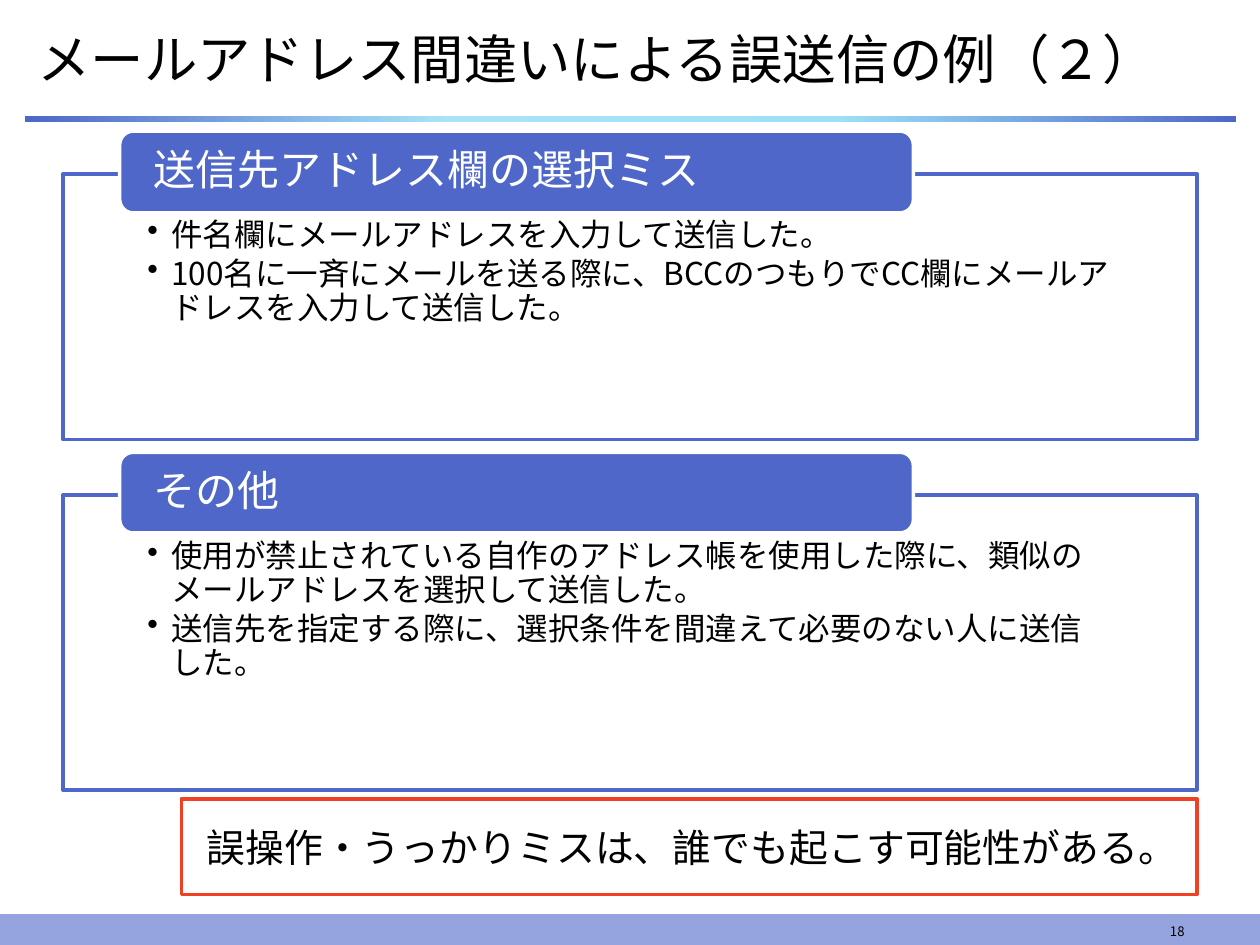
from lxml import etree
from pptx import Presentation
from pptx.dml.color import RGBColor
from pptx.enum.shapes import MSO_SHAPE
from pptx.enum.text import MSO_ANCHOR, PP_ALIGN
from pptx.oxml.ns import qn
from pptx.util import Inches, Pt

RECT, ROUNDED = MSO_SHAPE.RECTANGLE, MSO_SHAPE.ROUNDED_RECTANGLE
TOP, MIDDLE, BOTTOM = MSO_ANCHOR.TOP, MSO_ANCHOR.MIDDLE, MSO_ANCHOR.BOTTOM
LEFT, RIGHT = PP_ALIGN.LEFT, PP_ALIGN.RIGHT

FONT = "Noto Sans CJK JP"
BLUE, PALE_BLUE, RED = "4E67C8", "95A4DE", "F14124"
WHITE, BLACK = "FFFFFF", "000000"
RULE_STOPS = [(0, BLUE), (35, "A9E3F8"), (67, "9EE0F7"), (100, BLUE)]
DEFAULT_INSETS = (0.1, 0.05, 0.1, 0.05)

CARDS = [
    # frame box, tab height, heading, points
    ((0.5, 1.38, 9, 2.11), 0.65, "送信先アドレス欄の選択ミス", [
        "件名欄にメールアドレスを入力して送信した。",
        "100名に一斉にメールを送る際に、BCCのつもりでCC欄にメールアドレスを入力して送信した。",
    ]),
    ((0.5, 3.93, 9, 2.34), 0.64, "その他", [
        "使用が禁止されている自作のアドレス帳を使用した際に、類似のメールアドレスを選択して送信した。",
        "送信先を指定する際に、選択条件を間違えて必要のない人に送信した。",
    ]),
]


def rgb(color):
    return RGBColor.from_string(color)


def add_box(slide, box, fill, line=None, width=2, preset=RECT):
    shape = slide.shapes.add_shape(preset, *map(Inches, box))
    shape.shadow.inherit = False
    shape.fill.solid()
    shape.fill.fore_color.rgb = rgb(fill)
    if line:
        shape.line.color.rgb = rgb(line)
        shape.line.width = Pt(width)
    else:
        shape.line.fill.background()
    return shape


def add_bullet(paragraph, indent):
    properties = paragraph._p.get_or_add_pPr()
    properties.set("marL", str(Inches(indent)))
    properties.set("indent", str(-Inches(indent)))
    etree.SubElement(properties, qn("a:buChar"), char="•")


def write(shape, lines, size, color=BLACK, anchor=MIDDLE, insets=DEFAULT_INSETS,
          align=LEFT, spacing=1.0, after=0, bullet_indent=None):
    frame = shape.text_frame
    sides = ("margin_left", "margin_top", "margin_right", "margin_bottom")
    frame_format = {"word_wrap": True, "vertical_anchor": anchor,
                    **dict(zip(sides, map(Inches, insets)))}
    for name, value in frame_format.items():
        setattr(frame, name, value)
    frame.text = "\n".join(lines)
    paragraph_format = {"alignment": align, "line_spacing": spacing,
                        "space_after": Pt(after)}
    for paragraph in frame.paragraphs:
        for name, value in paragraph_format.items():
            setattr(paragraph, name, value)
        if bullet_indent:
            add_bullet(paragraph, bullet_indent)
        for run in paragraph.runs:
            run.font.size = Pt(size)
            run.font.name = FONT
            run.font.color.rgb = rgb(color)
            etree.SubElement(run._r.get_or_add_rPr(), qn("a:ea"), typeface=FONT)


def add_text(slide, box, text, size, **options):
    write(slide.shapes.add_textbox(*map(Inches, box)), [text], size, **options)


def add_header(slide, box):
    left, top, width, height = box
    add_text(slide, (left, top, width, 0.65), "メールアドレス間違いによる誤送信の例（２）", 30.5)

    # Rule that lightens towards the middle
    rule = add_box(slide, (left, top + height - 0.05, width, 0.05), BLUE)
    rule.fill.gradient()
    rule.fill.gradient_angle = 0
    stops = rule._element.spPr.find(qn("a:gradFill")).find(qn("a:gsLst"))
    for stop in list(stops):
        stops.remove(stop)
    for position, color in RULE_STOPS:
        stop = etree.SubElement(stops, qn("a:gs"), pos=str(position * 1000))
        etree.SubElement(stop, qn("a:srgbClr"), val=color)


def add_card(slide, box, tab_height, heading, points):
    left, top, width, _ = box
    # Frame with its points
    frame = add_box(slide, box, WHITE, BLUE)
    fill_color = frame._element.spPr.find(qn("a:solidFill"))[0]
    etree.SubElement(fill_color, qn("a:alpha"), val="90000")
    write(frame, points, 18, anchor=TOP, insets=(0.67, 0.36, 0.67, 0.08),
          spacing=0.9, after=2.7, bullet_indent=0.19)

    # Heading tab across the top edge
    tab_box = (left + 0.45, top - 0.34, width * 0.7, tab_height)
    tab = add_box(slide, tab_box, BLUE, WHITE, preset=ROUNDED)
    write(tab, [heading], 24, WHITE, insets=(0.24, 0, 0.24, 0), spacing=0.9)


def add_conclusion(slide, box):
    conclusion = add_box(slide, box, WHITE, RED)
    write(conclusion, ["誤操作・うっかりミスは、誰でも起こす可能性がある。"], 22.2,
          insets=(0.2,) * 4)


def add_footer(slide, box):
    left, top, width, height = box
    add_box(slide, box, PALE_BLUE, PALE_BLUE, 0.75)
    number_width = 2.33
    number_left = left + width - 0.5 - number_width
    add_text(slide, (number_left, top, number_width, height), "18", 7.5,
             anchor=BOTTOM, align=RIGHT)


def main():
    presentation = Presentation()
    presentation.slide_width = Inches(10)
    presentation.slide_height = Inches(7.5)
    slide = presentation.slides.add_slide(presentation.slide_layouts[6])
    add_footer(slide, (0, 7.26, 10, 0.24))
    add_header(slide, (0.2, 0.14, 9.61, 0.83))
    for card in CARDS:
        add_card(slide, *card)
    add_conclusion(slide, (1.44, 6.34, 8.06, 0.76))
    presentation.save("out.pptx")


if __name__ == "__main__":
    main()
